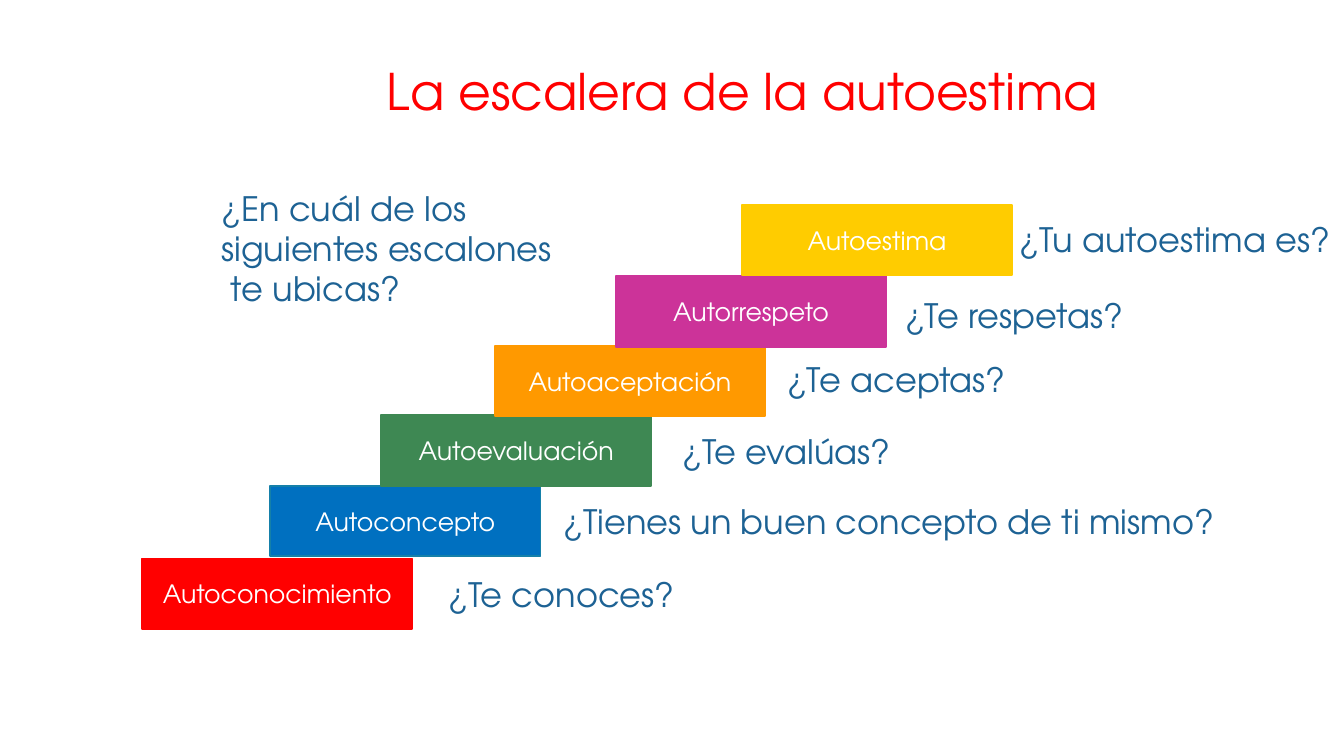
from pptx import Presentation
from pptx.dml.color import RGBColor
from pptx.enum.shapes import MSO_SHAPE
from pptx.enum.text import MSO_ANCHOR, PP_ALIGN
from pptx.util import Pt

FONT = "TeX Gyre Adventor"
WHITE, RED, BLUE = "FFFFFF", "FF0000", "1D6294"
STEP_WIDTH, STEP_HEIGHT = 193, 50.4
QUESTION_HEIGHT = 36


def color(value):
    return RGBColor.from_string(value)


def write(box, lines, size, ink, align=PP_ALIGN.LEFT, anchor=MSO_ANCHOR.TOP):
    """Fill a shape or text box with one paragraph per line."""
    frame = box.text_frame
    frame.word_wrap = True
    frame.vertical_anchor = anchor
    for index, line in enumerate(lines):
        para = frame.paragraphs[0] if index == 0 else frame.add_paragraph()
        para.alignment = align
        span = para.add_run()
        span.text = line
        for name, value in {"name": FONT, "size": Pt(size)}.items():
            setattr(span.font, name, value)
        span.font.color.rgb = color(ink)


deck = Presentation()
deck.slide_width, deck.slide_height = Pt(960), Pt(540)
page = deck.slides.add_slide(deck.slide_layouts[6])

title = page.shapes.add_textbox(Pt(179.3), Pt(39.6), Pt(702), Pt(71.3))
write(title, ["La escalera de la autoestima"], 36, RED, PP_ALIGN.CENTER)

# Steps from bottom to top: label, left, top, fill, outline
steps = [
    ("Autoconocimiento", 101.5, 398.9, RED, RED),
    ("Autoconcepto", 193, 347, "0070C0", "1580A9"),
    ("Autoevaluación", 272.2, 296.6, "3E8853", "3E8853"),
    ("Autoaceptación", 353.5, 247, "FF9900", "FF9900"),
    ("Autorrespeto", 440, 197.3, "CC3399", "CC3399"),
    ("Autoestima", 530, 146.2, "FFCC00", "FFCC00"),
]
for label, left, top, fill, outline in steps:
    step = page.shapes.add_shape(
        MSO_SHAPE.RECTANGLE, Pt(left), Pt(top), Pt(STEP_WIDTH), Pt(STEP_HEIGHT))
    step.shadow.inherit = False
    step.fill.solid()
    step.fill.fore_color.rgb = color(fill)
    step.line.color.rgb = color(outline)
    step.line.width = Pt(1.25)
    write(step, [label], 18, WHITE, PP_ALIGN.CENTER, MSO_ANCHOR.MIDDLE)

prompt = page.shapes.add_textbox(Pt(151.2), Pt(130.3), Pt(253.4), Pt(94.3))
write(prompt, ["¿En cuál de los siguientes escalones", " te ubicas?"], 24, BLUE)

# Question beside each step: text, left, top, width
questions = [
    ("¿Te conoces?", 313.2, 406.1, 183),
    ("¿Tienes un buen concepto de ti mismo?", 395.3, 354.2, 489),
    ("¿Te evalúas?", 480.2, 304.6, 180),
    ("¿Te aceptas?", 555.1, 252.7, 180),
    ("¿Te respetas?", 639.4, 207.4, 180),
    ("¿Tu autoestima es?", 721.4, 152.6, 238.3),
]
for text, left, top, width in questions:
    question = page.shapes.add_textbox(Pt(left), Pt(top), Pt(width), Pt(QUESTION_HEIGHT))
    write(question, [text], 24, BLUE)

deck.save("out.pptx")
